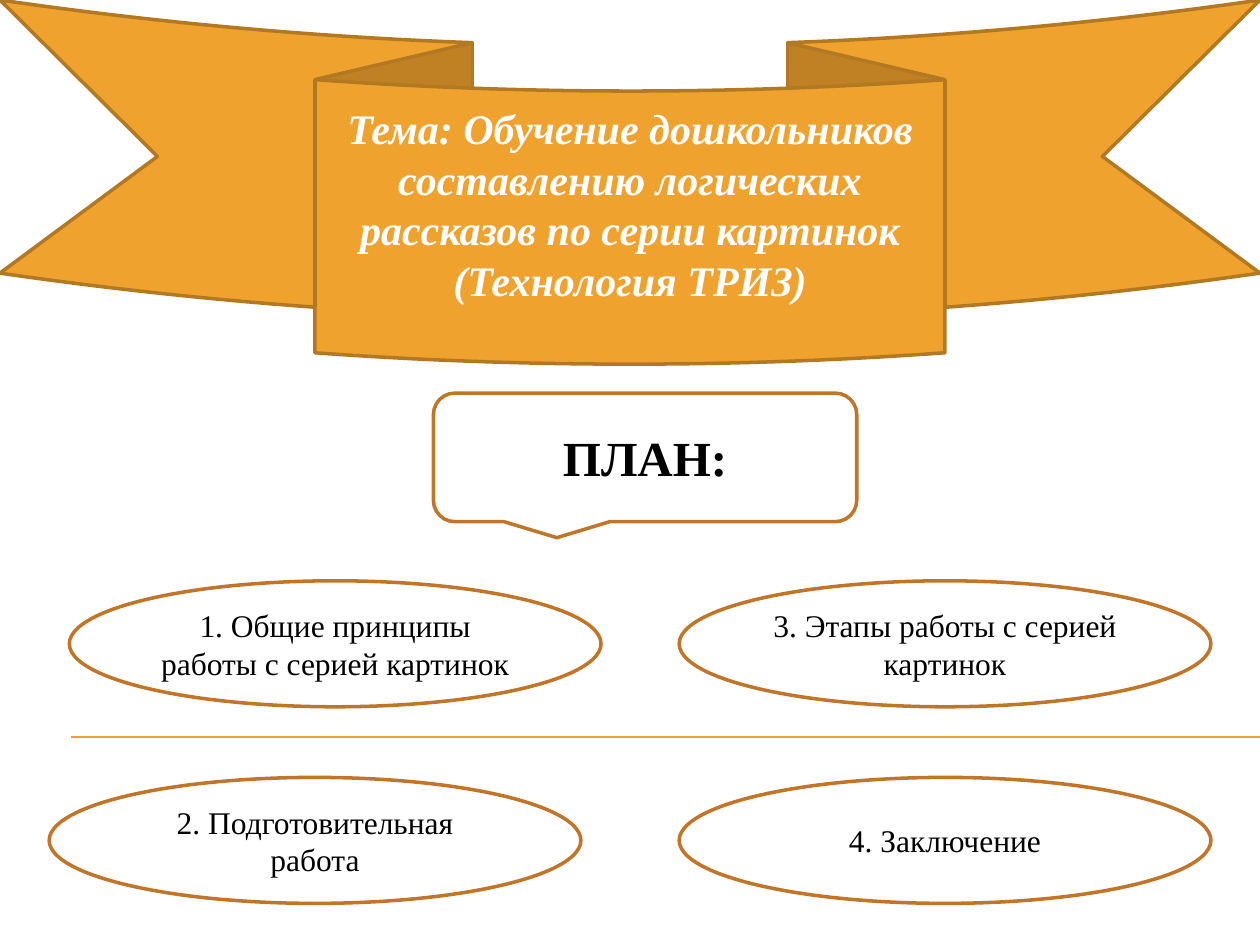
"""Build the lesson plan slide: a title ribbon, a plan callout and four topics."""
from lxml import etree
from pptx import Presentation
from pptx.dml.color import RGBColor
from pptx.enum import shapes, text
from pptx.oxml import ns
from pptx.util import Inches, Pt

GOLD = RGBColor(0xF0, 0xA2, 0x2E)
DARK_GOLD = RGBColor(0xB2, 0x78, 0x22)
BROWN = RGBColor(0xC1, 0x75, 0x29)
WHITE = RGBColor(0xFF, 0xFF, 0xFF)
BLACK = RGBColor(0x00, 0x00, 0x00)
FONT = "Times New Roman"

THEME = (
    "Тема: Обучение дошкольников составлению логических "
    "рассказов по серии картинок (Технология ТРИЗ)"
)
PLAN = "ПЛАН:"
TOPIC_ROWS = [
    (4.61, [(0.55, "1. Общие принципы работы с серией картинок"),
            (5.39, "3. Этапы работы с серией картинок")]),
    (6.17, [(0.39, "2. Подготовительная работа"),
            (5.39, "4. Заключение")]),
]
TOPIC_SIZE = (4.22, 1)


def add_panel(slide, preset, box, wording, size, fill=WHITE, outline=BROWN,
              color=BLACK, bold=False, italic=False):
    """Add a filled, outlined shape with centred text."""
    panel = slide.shapes.add_shape(preset, *map(Inches, box))
    panel.shadow.inherit = False
    panel.fill.solid()
    panel.fill.fore_color.rgb = fill
    panel.line.color.rgb = outline
    panel.line.width = Pt(2)
    frame = panel.text_frame
    frame.word_wrap = True
    frame.vertical_anchor = text.MSO_ANCHOR.MIDDLE
    frame.text = wording
    paragraph = frame.paragraphs[0]
    paragraph.alignment = text.PP_ALIGN.CENTER
    font = paragraph.runs[0].font
    font.name, font.size, font.bold, font.italic = FONT, Pt(size), bold, italic
    font.color.rgb = color
    return panel


def add_divider(slide):
    """Add the thin line between the topic rows."""
    divider = slide.shapes.add_connector(
        shapes.MSO_CONNECTOR.STRAIGHT,
        Inches(0.56), Inches(5.85), Inches(10), Inches(5.85))
    divider.line.color.rgb = GOLD
    divider.line.width = Pt(0.75)
    etree.SubElement(divider._element.spPr, ns.qn("a:effectLst"))


def main():
    """Build and save the slide."""
    deck = Presentation()
    deck.slide_width, deck.slide_height = Inches(10), Inches(7.5)
    slide = deck.slides.add_slide(deck.slide_layouts[6])
    preset = shapes.MSO_SHAPE

    add_divider(slide)
    add_panel(slide, preset.ROUNDED_RECTANGULAR_CALLOUT,
              (3.44, 3.12, 3.36, 1.02), PLAN, 28, bold=True)
    for top, topics in TOPIC_ROWS:
        for left, topic in topics:
            add_panel(slide, preset.OVAL, (left, top, *TOPIC_SIZE), topic, 18)
    ribbon = add_panel(slide, preset.CURVED_DOWN_RIBBON, (0, 0, 10, 2.89),
                       THEME, 24, GOLD, DARK_GOLD, WHITE, bold=True, italic=True)
    ribbon.text_frame.margin_bottom = Inches(0.34)

    deck.save("out.pptx")


if __name__ == "__main__":
    main()
